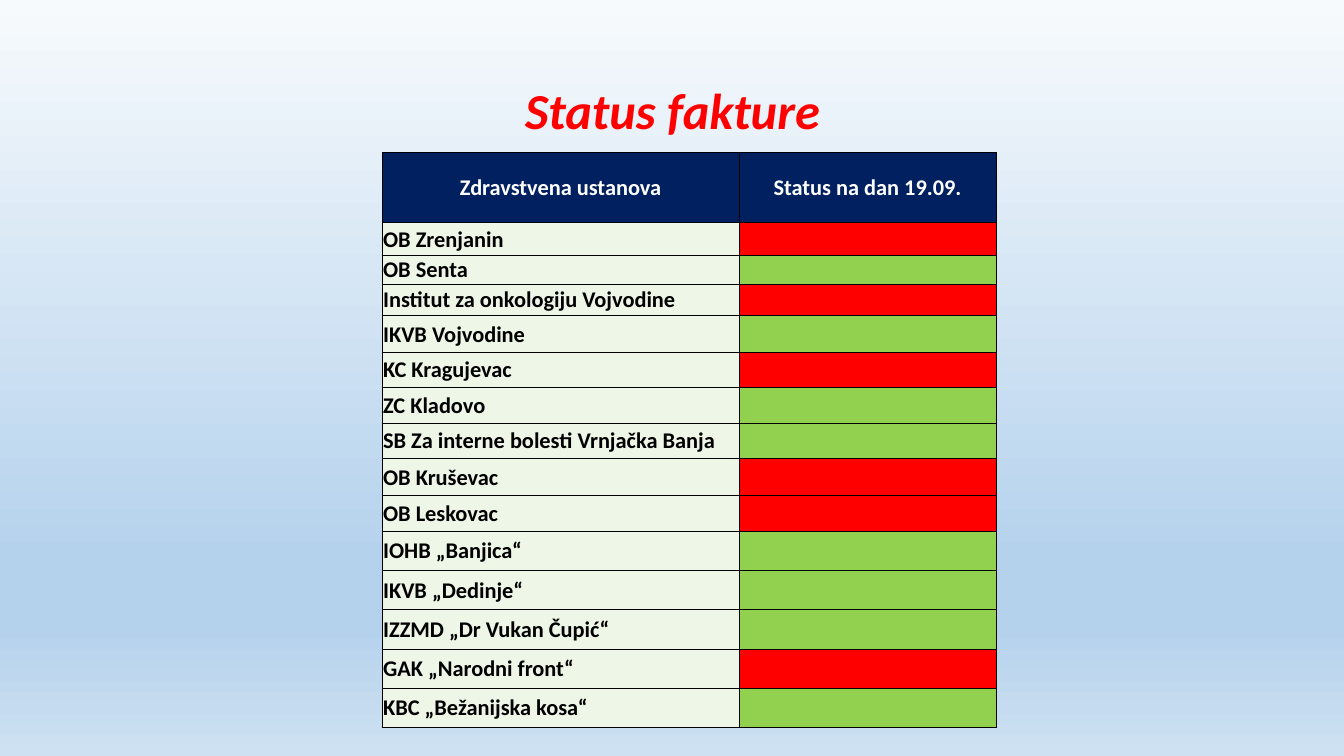
from lxml import etree
from pptx import Presentation
from pptx.dml.color import RGBColor
from pptx.enum.text import MSO_ANCHOR, PP_ALIGN
from pptx.oxml.ns import qn
from pptx.util import Inches, Pt

MIDDLE = MSO_ANCHOR.MIDDLE
LEFT, CENTER = PP_ALIGN.LEFT, PP_ALIGN.CENTER

THEME = {
    "font": "Calibri",
    "title_size": 36,
    "table_size": 16,
    "title": "FF0000",
    "header": "002060",
    "header_text": "FFFFFF",
    "name": "EEF6E8",
    "name_text": "000000",
    "open": "FF0000",
    "done": "92D050",
    "border": "000000",
    "background": [(0, "F7FAFD"), (74, "B5D2EC"), (83, "B5D2EC"), (100, "CEE1F2")],
}

HEADER = ("Zdravstvena ustanova", "Status na dan 19.09.")
HEADER_HEIGHT = 0.7
INSTITUTIONS = [
    ("OB Zrenjanin", "open", 0.32),
    ("OB Senta", "done", 0.29),
    ("Institut za onkologiju Vojvodine", "open", 0.31),
    ("IKVB Vojvodine", "done", 0.37),
    ("KC Kragujevac", "open", 0.34),
    ("ZC Kladovo", "done", 0.36),
    ("SB Za interne bolesti Vrnjačka Banja", "done", 0.35),
    ("OB Kruševac", "open", 0.37),
    ("OB Leskovac", "open", 0.35),
    ("IOHB „Banjica“", "done", 0.39),
    ("IKVB „Dedinje“", "done", 0.39),
    ("IZZMD „Dr Vukan Čupić“", "done", 0.39),
    ("GAK „Narodni front“", "open", 0.39),
    ("KBC „Bežanijska kosa“", "done", 0.39),
]


def style_text(p, size, color, align):
    p.alignment = align
    p.font.name = THEME["font"]
    p.font.size = Pt(size)
    p.font.bold = True
    p.font.color.rgb = RGBColor.from_string(color)


def fill_cell(cell, text, fill, color, align):
    cell.margin_left = cell.margin_right = cell.margin_top = Inches(0.01)
    cell.margin_bottom = 0
    cell.vertical_anchor = MIDDLE
    cell.fill.solid()
    cell.fill.fore_color.rgb = RGBColor.from_string(THEME[fill])
    p = cell.text_frame.paragraphs[0]
    if text:
        p.text = text
        style_text(p, THEME["table_size"], color, align)
    else:
        etree.SubElement(p._p, qn("a:endParaRPr"), sz=str(THEME["table_size"] * 100))
    tc_pr = cell._tc.get_or_add_tcPr()
    for i, side in enumerate(("lnL", "lnR", "lnT", "lnB")):
        ln = etree.Element(qn(f"a:{side}"), w=str(Pt(0.5)))
        solid = etree.SubElement(ln, qn("a:solidFill"))
        etree.SubElement(solid, qn("a:srgbClr"), val=THEME["border"])
        tc_pr.insert(i, ln)


prs = Presentation()
prs.slide_width, prs.slide_height = Inches(13.33), Inches(7.5)
s = prs.slides.add_slide(prs.slide_layouts[6])

bg_fill = s.background.fill
bg_fill.gradient()
bg_fill.gradient_angle = 270
stops = next(s.element.iter(qn("a:gsLst")))
for stop in list(stops):
    stops.remove(stop)
for position, color in THEME["background"]:
    stop = etree.SubElement(stops, qn("a:gs"), pos=str(position * 1000))
    etree.SubElement(stop, qn("a:srgbClr"), val=color)

title = s.shapes.add_textbox(Inches(0.92), Inches(0.4), Inches(11.5), Inches(1.45))
tf = title.text_frame
tf.word_wrap = True
tf.vertical_anchor = MIDDLE
p = tf.paragraphs[0]
p.text = "Status fakture"
p.line_spacing = 0.9
style_text(p, THEME["title_size"], THEME["title"], CENTER)
p.font.italic = True

table = s.shapes.add_table(len(INSTITUTIONS) + 1, 2, Inches(3.79), Inches(1.51),
                           Inches(6.09), Inches(5.7)).table
table.columns[0].width = Inches(3.54)
table.columns[1].width = Inches(2.55)
table.rows[0].height = Inches(HEADER_HEIGHT)
for col, text in enumerate(HEADER):
    fill_cell(table.cell(0, col), text, "header", THEME["header_text"], CENTER)
for row, (name, status, height) in enumerate(INSTITUTIONS, 1):
    table.rows[row].height = Inches(height)
    fill_cell(table.cell(row, 0), name, "name", THEME["name_text"], LEFT)
    fill_cell(table.cell(row, 1), "", status, THEME["name_text"], LEFT)

prs.save("out.pptx")
